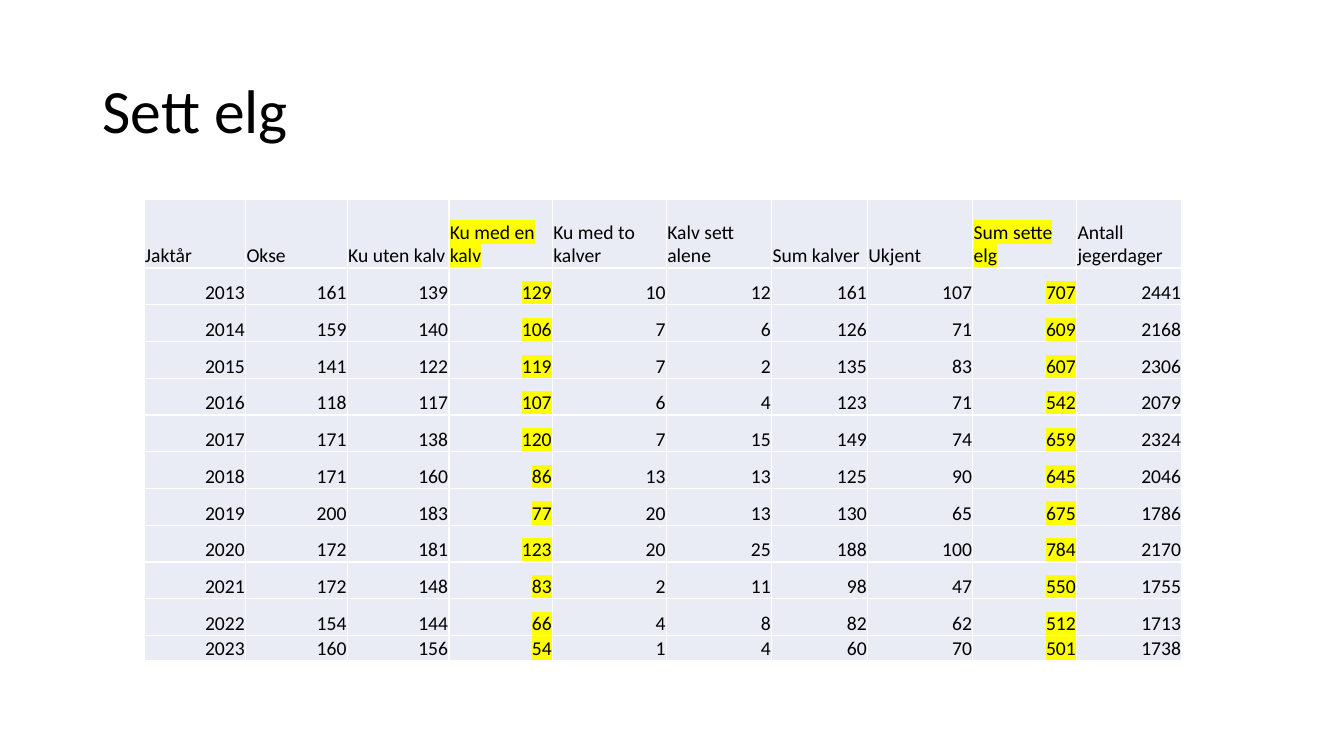
from lxml import etree
from pptx import Presentation
from pptx.dml.color import RGBColor
from pptx.enum.text import MSO_ANCHOR, PP_ALIGN
from pptx.oxml.ns import qn
from pptx.util import Pt

LEFT, RIGHT = PP_ALIGN.LEFT, PP_ALIGN.RIGHT
MIDDLE, BOTTOM = MSO_ANCHOR.MIDDLE, MSO_ANCHOR.BOTTOM
BLACK = RGBColor(0x00, 0x00, 0x00)
WHITE = RGBColor(0xFF, 0xFF, 0xFF)
PALE_BLUE = RGBColor(0xE9, 0xEB, 0xF5)
YELLOW = RGBColor(0xFF, 0xFF, 0x00)
FONT = "Calibri"
TITLE_ONLY = 5

HEADINGS = ["Jaktår", "Okse", "Ku uten kalv", "Ku med en kalv", "Ku med to kalver",
            "Kalv sett alene", "Sum kalver", "Ukjent", "Sum sette elg", "Antall jegerdager"]
SIGHTINGS = [
    [2013, 161, 139, 129, 10, 12, 161, 107, 707, 2441],
    [2014, 159, 140, 106, 7, 6, 126, 71, 609, 2168],
    [2015, 141, 122, 119, 7, 2, 135, 83, 607, 2306],
    [2016, 118, 117, 107, 6, 4, 123, 71, 542, 2079],
    [2017, 171, 138, 120, 7, 15, 149, 74, 659, 2324],
    [2018, 171, 160, 86, 13, 13, 125, 90, 645, 2046],
    [2019, 200, 183, 77, 20, 13, 130, 65, 675, 1786],
    [2020, 172, 181, 123, 20, 25, 188, 100, 784, 2170],
    [2021, 172, 148, 83, 2, 11, 98, 47, 550, 1755],
    [2022, 154, 144, 66, 4, 8, 82, 62, 512, 1713],
    [2023, 160, 156, 54, 1, 4, 60, 70, 501, 1738],
]
HIGHLIGHTED = {"Ku med en kalv", "Sum sette elg"}
COLUMN_WIDTHS = [72.6, 72.6, 72.6, 74, 81.4, 75.2, 68.5, 75.2, 74.2, 75.2]
ROW_HEIGHTS = [49] + [26.25] * 10 + [17.2]


def format_run(run, size):
    """Give a run the slide's font and colour at the given size."""
    run.font.name = FONT
    run.font.size = Pt(size)
    run.font.color.rgb = BLACK


def highlight_run(run, color):
    """Mark a formatted run with a highlight colour."""
    mark = etree.Element(qn("a:highlight"))
    etree.SubElement(mark, qn("a:srgbClr"), val=str(color))
    run.font._element.find(qn("a:latin")).addprevious(mark)


def add_borders(cell, color, width):
    """Draw a line on all four sides of a cell."""
    properties = cell._tc.get_or_add_tcPr()
    for position, side in enumerate(("a:lnL", "a:lnR", "a:lnT", "a:lnB")):
        line = etree.Element(qn(side), w=str(Pt(width)))
        fill = etree.SubElement(line, qn("a:solidFill"))
        etree.SubElement(fill, qn("a:srgbClr"), val=str(color))
        properties.insert(position, line)


def fill_cell(cell, text, align, highlighted):
    """Write and format one cell of the table."""
    cell.fill.solid()
    cell.fill.fore_color.rgb = PALE_BLUE
    add_borders(cell, WHITE, 1)
    cell.vertical_anchor = BOTTOM
    cell.margin_left = cell.margin_right = cell.margin_top = Pt(0.6)
    cell.margin_bottom = Pt(0)
    para = cell.text_frame.paragraphs[0]
    para.text = text
    para.alignment = align
    run = para.runs[0]
    format_run(run, 14)
    if highlighted:
        highlight_run(run, YELLOW)


def place_title(page, text, left, top, width, height):
    """Move and format the title placeholder."""
    title = page.shapes.title
    title.left, title.top, title.width, title.height = map(Pt, (left, top, width, height))
    title.text_frame.text = text
    title.text_frame.vertical_anchor = MIDDLE
    para = title.text_frame.paragraphs[0]
    para.alignment = LEFT
    para.line_spacing = 0.9
    format_run(para.runs[0], 44)


def add_sightings_table(page, left, top):
    """Add the table of moose sightings with its corner at the given point."""
    table = page.shapes.add_table(
        len(ROW_HEIGHTS), len(HEADINGS), Pt(left), Pt(top),
        Pt(sum(COLUMN_WIDTHS)), Pt(sum(ROW_HEIGHTS))).table
    table.first_row = False
    table.horz_banding = False
    for column, width in zip(table.columns, COLUMN_WIDTHS):
        column.width = Pt(width)
    for row, height, values in zip(table.rows, ROW_HEIGHTS, [HEADINGS] + SIGHTINGS):
        row.height = Pt(height)
        align = LEFT if values is HEADINGS else RIGHT
        for cell, heading, value in zip(row.cells, HEADINGS, values):
            fill_cell(cell, str(value), align, heading in HIGHLIGHTED)


def main():
    """Build the deck and save it."""
    deck = Presentation()
    deck.slide_width, deck.slide_height = Pt(960), Pt(540)
    page = deck.slides.add_slide(deck.slide_layouts[TITLE_ONLY])
    place_title(page, "Sett elg", 66, 28.75, 828, 104.4)
    add_sightings_table(page, 102.9, 142.5)
    deck.save("out.pptx")


if __name__ == "__main__":
    main()
